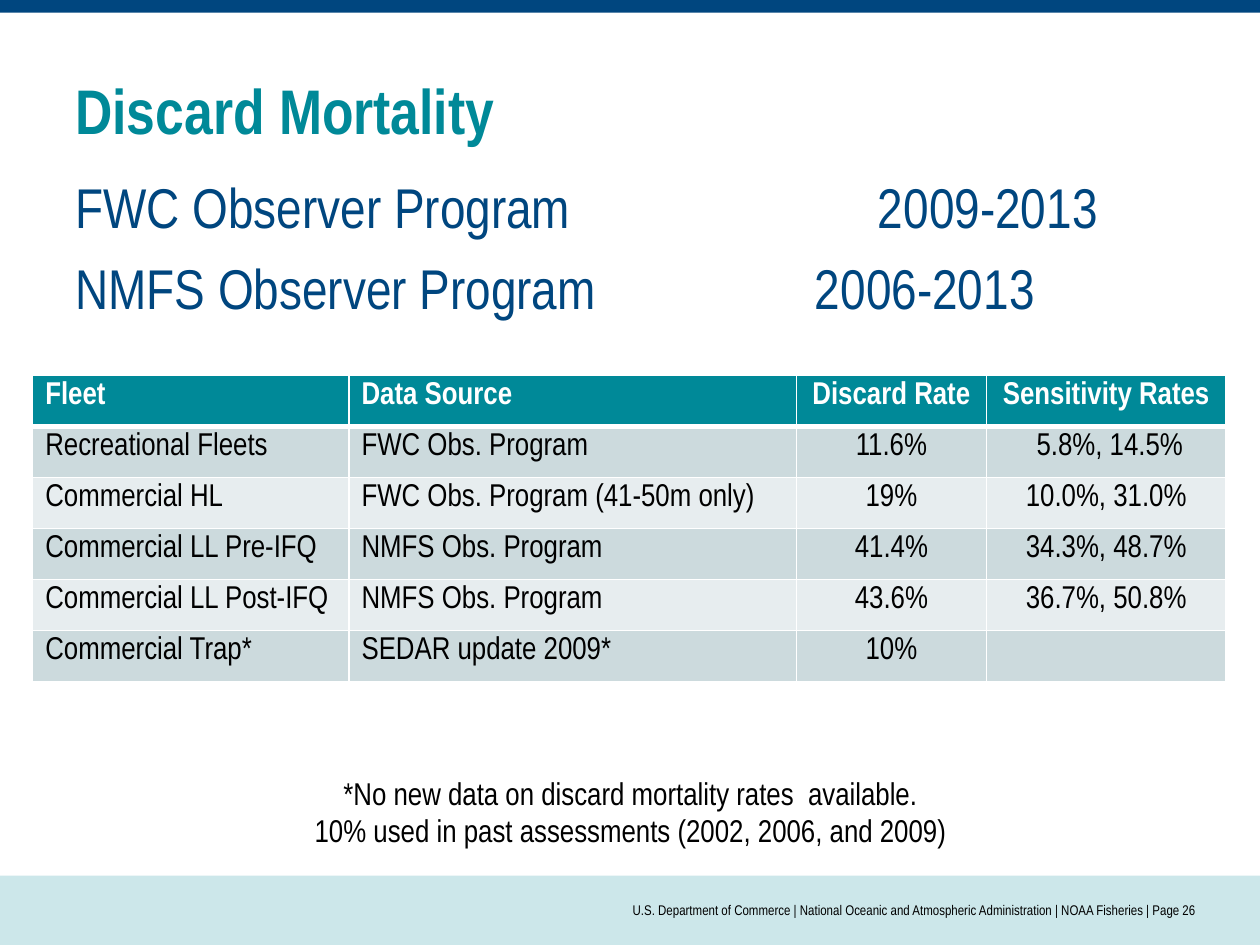
"""Build the discard mortality slide: observer programs, rates by fleet and a note."""
from lxml.etree import SubElement
from pptx import Presentation
from pptx.dml.color import RGBColor
from pptx.enum.shapes import MSO_SHAPE as Preset
from pptx.enum.text import MSO_ANCHOR as Anchor, PP_ALIGN as Align
from pptx.oxml.ns import qn
from pptx.util import Inches, Pt

NAVY = RGBColor(0x00, 0x46, 0x7F)
TEAL = RGBColor(0x00, 0x89, 0x98)
PALE_TEAL = RGBColor(0xCC, 0xE7, 0xEA)
BAND_DARK = RGBColor(0xCC, 0xDA, 0xDD)
BAND_LIGHT = RGBColor(0xE7, 0xED, 0xEF)
WHITE = RGBColor(0xFF, 0xFF, 0xFF)
BLACK = RGBColor(0x00, 0x00, 0x00)

FONT = "Arial Narrow"
COLUMNS, ROWS = 20, 15
WIDTH, HEIGHT = Inches(10), Inches(7.5)

PROGRAMS = [("FWC Observer Program", "2009-2013", 12.74),
            ("NMFS Observer Program", "2006-2013", 11.74)]
FLEET_COLUMNS = [5.02, 7.1, 3.02, 3.8]
FLEET_RATES = [
    ("Fleet", "Data Source", "Discard Rate", "Sensitivity Rates"),
    ("Recreational Fleets", "FWC Obs. Program", "11.6%", " 5.8%, 14.5%"),
    ("Commercial HL", "FWC Obs. Program (41-50m only)", "19%", "10.0%, 31.0%"),
    ("Commercial LL Pre-IFQ", "NMFS Obs. Program", "41.4%", "34.3%, 48.7%"),
    ("Commercial LL Post-IFQ", "NMFS Obs. Program", "43.6%", "36.7%, 50.8%"),
    ("Commercial Trap*", "SEDAR update 2009*", "10%", ""),
]
NOTE = ("*No new data on discard mortality rates  available.\n"
        "10% used in past assessments (2002, 2006, and 2009)")
FOOTER = " | ".join(["U.S. Department of Commerce",
                     "National Oceanic and Atmospheric Administration",
                     "NOAA Fisheries", "Page 26"])


def across(columns):
    """Return the length of a number of grid columns."""
    return round(WIDTH * columns / COLUMNS)


def down(rows):
    """Return the length of a number of grid rows."""
    return round(HEIGHT * rows / ROWS)


def area(left, top, width, height):
    """Return a grid area as slide lengths."""
    return across(left), down(top), across(width), down(height)


def style(paragraph, size, color, bold=False, align=Align.LEFT):
    """Format a paragraph and all its runs."""
    paragraph.alignment = align
    for run in paragraph.runs:
        run.font.name, run.font.size, run.font.bold = FONT, Pt(size), bold
        run.font.color.rgb = color


def add_band(slide, place, color):
    """Add a plain band of colour."""
    band = slide.shapes.add_shape(Preset.RECTANGLE, *area(*place))
    band.shadow.inherit = False
    band.fill.solid()
    band.fill.fore_color.rgb = color
    band.line.fill.background()


def add_words(slide, place, words, size, color, bold=False,
              align=Align.LEFT, anchor=Anchor.TOP):
    """Add a wrapping text box and return its text frame."""
    frame = slide.shapes.add_textbox(*area(*place)).text_frame
    frame.word_wrap = True
    frame.vertical_anchor = anchor
    frame.text = words
    for paragraph in frame.paragraphs:
        style(paragraph, size, color, bold, align)
    return frame


def add_programs(slide, place):
    """Add the observer programs with their years at tab stops."""
    words = "\n".join(f"{program}\t{years}" for program, years, _ in PROGRAMS)
    lines = add_words(slide, place, words, 32, NAVY).paragraphs
    for line, (_, _, stop) in zip(lines, PROGRAMS):
        stops = SubElement(line._p.get_or_add_pPr(), qn("a:tabLst"))
        SubElement(stops, qn("a:tab"), pos=str(across(stop)), algn="l")
    for line in lines[1:]:
        line.space_before = Pt(8)


def add_borders(cell, top, bottom):
    """Give a cell white borders of the given point widths."""
    properties = cell._tc.get_or_add_tcPr()
    for index, (side, points) in enumerate(
            [("lnL", 1), ("lnR", 1), ("lnT", top), ("lnB", bottom)]):
        border = properties.makeelement(qn(f"a:{side}"), {"w": str(Pt(points))})
        fill = SubElement(border, qn("a:solidFill"))
        SubElement(fill, qn("a:srgbClr"), val=str(WHITE))
        properties.insert(index, border)


def add_fleet_table(slide, place):
    """Add the banded table of discard rates by fleet."""
    table = slide.shapes.add_table(
        len(FLEET_RATES), len(FLEET_COLUMNS), *area(*place)).table
    for column, width in zip(table.columns, FLEET_COLUMNS):
        column.width = across(width)
    for row, entries in enumerate(FLEET_RATES):
        header = row == 0
        band = TEAL if header else BAND_DARK if row % 2 else BAND_LIGHT
        for column, entry in enumerate(entries):
            cell = table.cell(row, column)
            cell.text = entry
            cell.fill.solid()
            cell.fill.fore_color.rgb = band
            add_borders(cell, 3 if row == 1 else 1, 3 if header else 1)
            style(cell.text_frame.paragraphs[0], 18, WHITE if header else BLACK,
                  header, Align.CENTER if column > 1 else Align.LEFT)


def main():
    """Build and save the slide."""
    deck = Presentation()
    deck.slide_width, deck.slide_height = WIDTH, HEIGHT
    slide = deck.slides.add_slide(deck.slide_layouts[6])
    add_band(slide, (0, 13.9, COLUMNS, 1.1), PALE_TEAL)
    add_band(slide, (0, 0, COLUMNS, 0.2), NAVY)
    add_words(slide, (1, 1, 18, 1.48), "Discard Mortality", 36, TEAL,
              bold=True, anchor=Anchor.MIDDLE)
    add_fleet_table(slide, (0.52, 5.96, sum(FLEET_COLUMNS), 4.86))
    footer = add_words(slide, (5, 13.9, 14, 1.1), FOOTER, 8, BLACK,
                       align=Align.RIGHT, anchor=Anchor.MIDDLE)
    footer.margin_left = footer.margin_right = 0
    add_words(slide, (3.28, 12.18, 13.46, 1.42), NOTE, 18, BLACK,
              align=Align.CENTER)
    add_programs(slide, (1, 2.64, 18, 9.9))
    deck.save("out.pptx")


if __name__ == "__main__":
    main()
